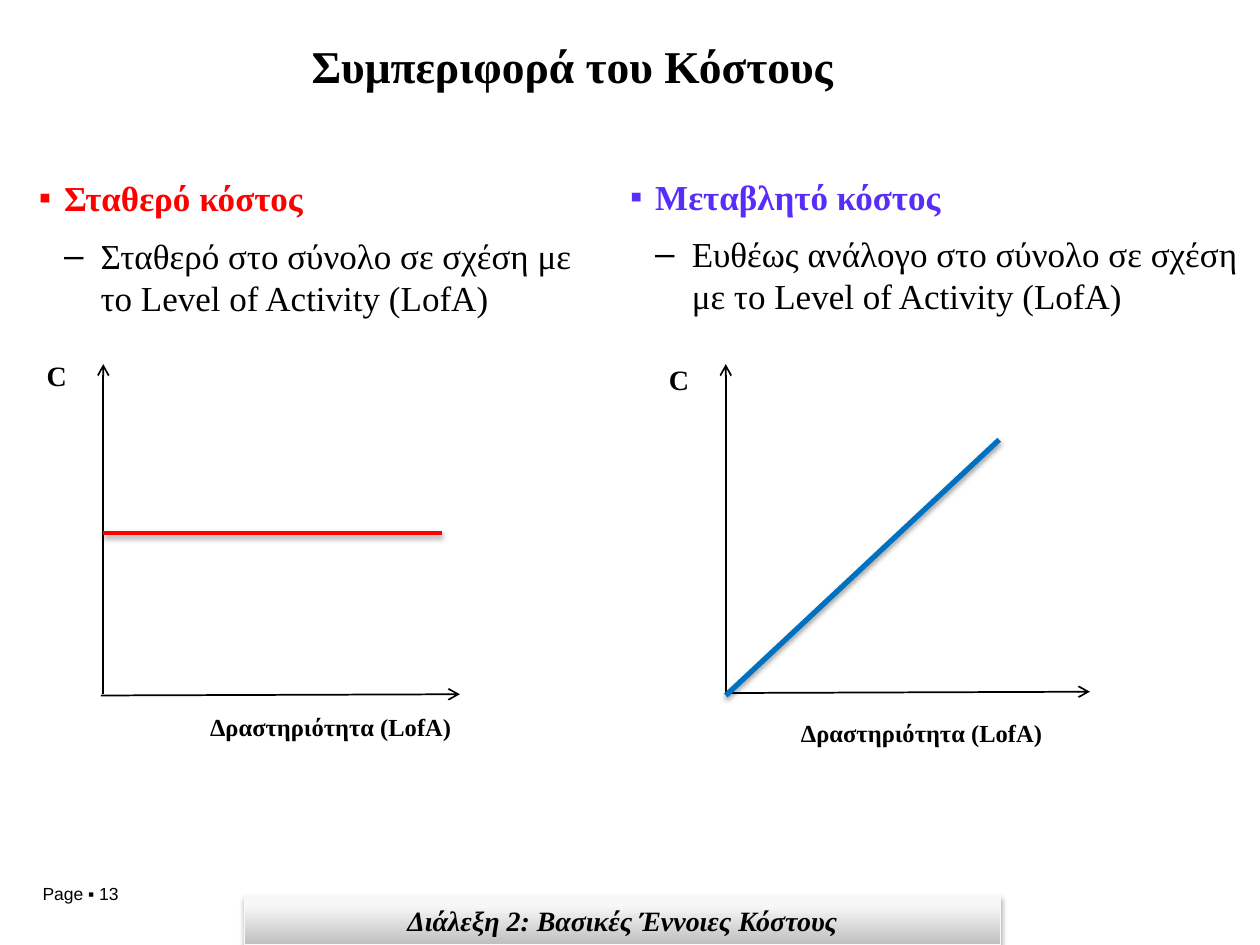
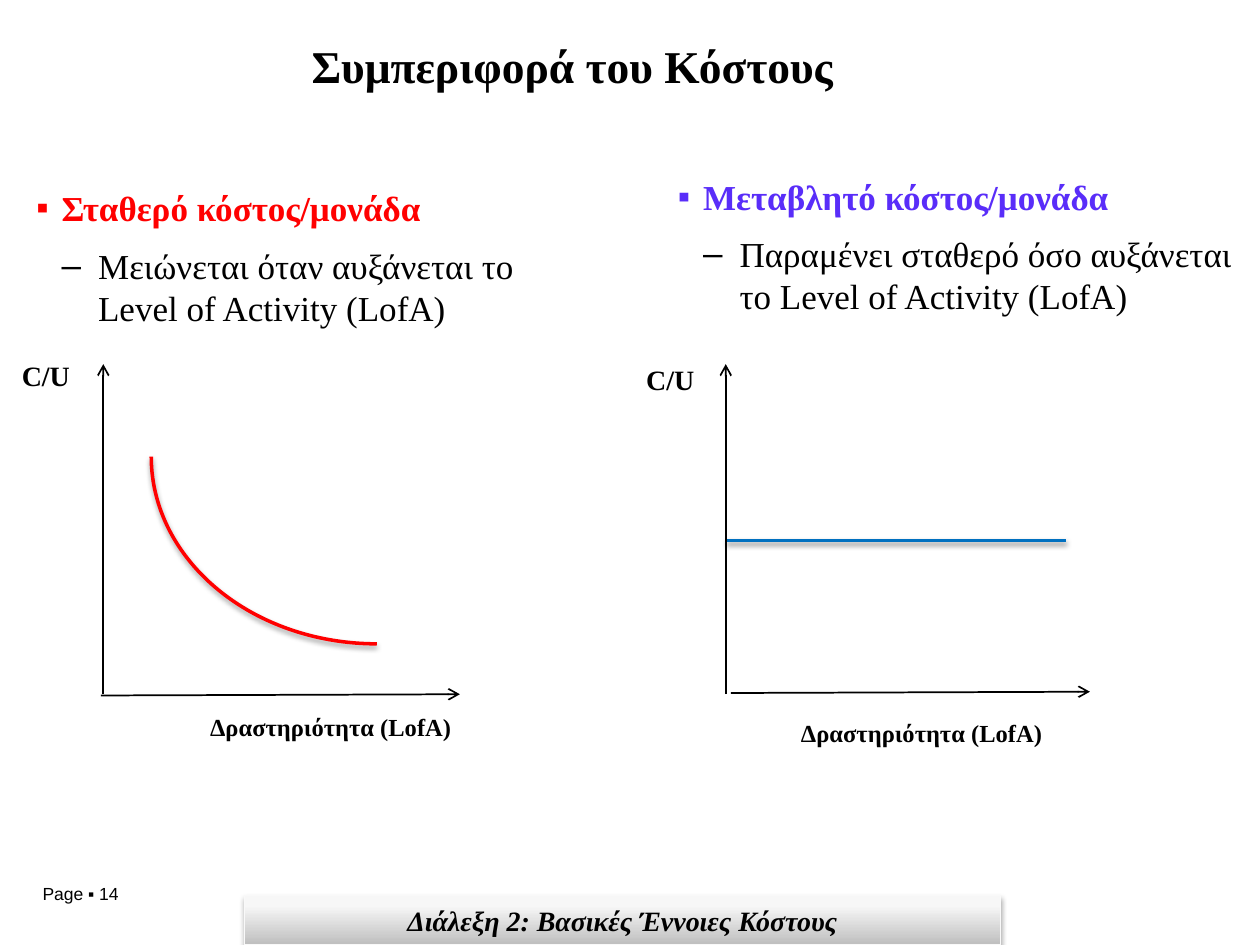
import dataclasses

import pptx
import pptx.dml.color
import pptx.dml.line
import pptx.enum.shapes
import pptx.enum.text
import pptx.oxml.ns
import pptx.slide
import pptx.util
from lxml import etree

Inches = pptx.util.Inches
Pt = pptx.util.Pt
qn = pptx.oxml.ns.qn
ALIGN = pptx.enum.text.PP_ALIGN
ANCHOR = pptx.enum.text.MSO_ANCHOR
SHAPE = pptx.enum.shapes.MSO_SHAPE

SERIF = "Times New Roman"
BLACK, RED, BLUE, VIOLET = "000000", "FF0000", "0070C0", "592DF9"
TITLE = "Συμπεριφορά του Κόστους"
FOOTER = "Διάλεξη 2: Βασικές Έννοιες Κόστους"
ACTIVITY = "Δραστηριότητα (LofA)"

Point = tuple[float, float]
Box = tuple[float, float, float, float]


@dataclasses.dataclass
class Axes:
    """Where one pair of axes and its activity label stand."""
    up: tuple[Point, Point]
    along: tuple[Point, Point]
    label: Box


@dataclasses.dataclass
class Curve:
    """A cost line between two points, or an arc inside a box."""
    color: str
    width: float
    ends: tuple[Point, Point] | None = None
    arc: Box | None = None


@dataclasses.dataclass
class Panel:
    """One kind of cost: its text, the name of its cost axis and its curve."""
    head: str
    color: str
    note: str
    box: Box
    inset: bool
    axis: str
    mark: Box
    curve: Curve


@dataclasses.dataclass
class Page:
    number: int
    panels: list[Panel]


AXES = [
    Axes(((0.82, 5.51), (0.82, 2.89)), ((0.8, 5.52), (3.65, 5.51)),
         (1.49, 5.6, 2.27, 0.34)),
    Axes(((5.76, 5.51), (5.76, 2.89)), ((5.8, 5.5), (8.65, 5.49)),
         (6.18, 5.65, 2.27, 0.34)),
]

PAGES = [
    Page(13, [
        Panel("Σταθερό κόστος", RED,
              "Σταθερό στο σύνολο σε σχέση με το Level of Activity (LofA)",
              (0.21, 1.35, 4.62, 1.2), True, "C", (0.17, 2.8, 0.56, 0.37),
              Curve(RED, 2, ends=((0.82, 4.23), (3.51, 4.23)))),
        Panel("Μεταβλητό κόστος", VIOLET,
              "Ευθέως ανάλογο στο σύνολο σε σχέση με το Level of Activity (LofA)",
              (5, 1.39, 4.99, 1.22), False, "C", (5.11, 2.83, 0.56, 0.37),
              Curve(BLUE, 3, ends=((5.76, 5.52), (7.93, 3.49)))),
    ]),
    Page(14, [
        Panel("Σταθερό κόστος/μονάδα", RED,
              "Μειώνεται όταν αυξάνεται το Level of Activity (LofA)",
              (0.19, 1.43, 4.62, 1.2), True, "C/U", (0, 2.8, 0.73, 0.37),
              Curve(RED, 2, arc=(1.2, 2.14, 3.58, 2.97))),
        Panel("Μεταβλητό κόστος/μονάδα", VIOLET,
              "Παραμένει σταθερό όσο αυξάνεται το Level of Activity (LofA)",
              (5.38, 1.39, 4.62, 1.22), False, "C/U", (4.97, 2.83, 0.7, 0.37),
              Curve(BLUE, 2, ends=((5.77, 4.29), (8.46, 4.29)))),
    ]),
]


def rgb(color: str) -> pptx.dml.color.RGBColor:
    return pptx.dml.color.RGBColor.from_string(color)


def place(box: Box) -> list[pptx.util.Length]:
    return [Inches(side) for side in box]


def style(para, size: float, color: str = BLACK, bold: bool = True,
          italic: bool = False, face: str = SERIF) -> None:
    for run in para.runs:
        font = run.font
        font.name, font.size = face, Pt(size)
        font.bold, font.italic = bold, italic
        font.color.rgb = rgb(color)


def pad(frame, side: float, edge: float) -> None:
    frame.margin_left = frame.margin_right = Inches(side)
    frame.margin_top = frame.margin_bottom = Inches(edge)


def stroke(line: pptx.dml.line.LineFormat, color: str, width: float) -> None:
    line.color.rgb = rgb(color)
    line.width = Pt(width)


def effect(shape, alpha: int = 0) -> None:
    """Replace the theme shadow by a soft one below, or by none; call last."""
    effects = etree.SubElement(shape._element.spPr, qn("a:effectLst"))
    if alpha:
        shadow = etree.SubElement(
            effects, qn("a:outerShdw"), blurRad=str(Pt(3.1)), dist=str(Pt(1.7)),
            dir="5400000", rotWithShape="0")
        tint = etree.SubElement(shadow, qn("a:srgbClr"), val=BLACK)
        etree.SubElement(tint, qn("a:alpha"), val=str(alpha * 1000))


def add_text(slide: pptx.slide.Slide, box: Box, text: str):
    """Add a wrapped text box and return its frame."""
    frame = slide.shapes.add_textbox(*place(box)).text_frame
    frame.word_wrap = True
    frame.text = text
    return frame


def add_label(slide: pptx.slide.Slide, box: Box, text: str, size: float) -> None:
    para = add_text(slide, box, text).paragraphs[0]
    para.alignment = ALIGN.CENTER
    style(para, size)


def add_line(slide: pptx.slide.Slide, ends: tuple[Point, Point],
             color: str, width: float):
    start, end = ends
    line = slide.shapes.add_connector(
        pptx.enum.shapes.MSO_CONNECTOR.STRAIGHT, *place(start + end))
    stroke(line.line, color, width)
    return line


def add_arrow(slide: pptx.slide.Slide, ends: tuple[Point, Point]) -> None:
    line = add_line(slide, ends, BLACK, 1)
    etree.SubElement(line._element.spPr.find(qn("a:ln")), qn("a:tailEnd"),
                     type="arrow")
    effect(line)


def add_curve(slide: pptx.slide.Slide, curve: Curve) -> None:
    if curve.arc:
        shape = slide.shapes.add_shape(SHAPE.ARC, *place(curve.arc))
        shape.rotation = 180
        shape.fill.background()
        stroke(shape.line, curve.color, curve.width)
    else:
        shape = add_line(slide, curve.ends, curve.color, curve.width)
    effect(shape, 38)


def bullet(para, mark: str, left: float, hang: float) -> None:
    para.space_after = Pt(9)
    props = para._p.get_or_add_pPr()
    props.set("marL", str(Inches(left)))
    props.set("indent", str(-Inches(hang)))
    etree.SubElement(props, qn("a:buFont"), typeface="Arial")
    etree.SubElement(props, qn("a:buChar"), char=mark)


def add_body(slide: pptx.slide.Slide, panel: Panel) -> None:
    frame = add_text(slide, panel.box, panel.head)
    if not panel.inset:
        pad(frame, 0, 0)
    head, note = frame.paragraphs[0], frame.add_paragraph()
    note.text = panel.note
    note.level = 1
    bullet(head, "▪", 0.2, 0.2)
    bullet(note, "–", 0.49, 0.29)
    style(head, 20, panel.color)
    style(note, 20, bold=False)


def add_panel(slide: pptx.slide.Slide, panel: Panel, axes: Axes) -> None:
    add_arrow(slide, axes.up)
    add_arrow(slide, axes.along)
    add_label(slide, axes.label, ACTIVITY, 14)
    add_label(slide, panel.mark, panel.axis, 16)
    add_curve(slide, panel.curve)
    add_body(slide, panel)


def set_title(slide: pptx.slide.Slide) -> None:
    title = slide.shapes.title
    title.left, title.top, title.width, title.height = place((0.34, 0.3, 8.41, 0.71))
    frame = title.text_frame
    frame.text = TITLE
    frame.auto_size = pptx.enum.text.MSO_AUTO_SIZE.NONE
    frame.vertical_anchor = ANCHOR.TOP
    pad(frame, 0, 0.05)
    para = frame.paragraphs[0]
    para.alignment = ALIGN.CENTER
    para.line_spacing = 0.9
    style(para, 26)


def add_footer(slide: pptx.slide.Slide, number: int) -> None:
    frame = add_text(slide, (0.24, 6.96, 1.47, 0.27), f"Page ▪ {number}")
    style(frame.paragraphs[0], 10, bold=False, face="Arial")

    band = slide.shapes.add_shape(SHAPE.RECTANGLE, *place((1.94, 7.11, 6, 0.39)))
    band.fill.gradient()
    band.fill.gradient_angle = 90
    for stop, (spot, color) in zip(band.fill.gradient_stops,
                                   [(0, "BEBEBE"), (0.8, "F7F7F7")]):
        stop.position = spot
        stop.color.rgb = rgb(color)
    stroke(band.line, "F9F9F9", 0.75)
    effect(band, 35)
    frame = band.text_frame
    frame.text = FOOTER
    frame.vertical_anchor = ANCHOR.MIDDLE
    pad(frame, 0, 0)
    para = frame.paragraphs[0]
    para.alignment = ALIGN.CENTER
    style(para, 16, italic=True)


def main() -> None:
    deck = pptx.Presentation()
    deck.slide_width, deck.slide_height = Inches(10), Inches(7.5)
    for page in PAGES:
        slide = deck.slides.add_slide(deck.slide_layouts.get_by_name("Title Only"))
        set_title(slide)
        for panel, axes in zip(page.panels, AXES):
            add_panel(slide, panel, axes)
        add_footer(slide, page.number)
    deck.save("out.pptx")


if __name__ == "__main__":
    main()
